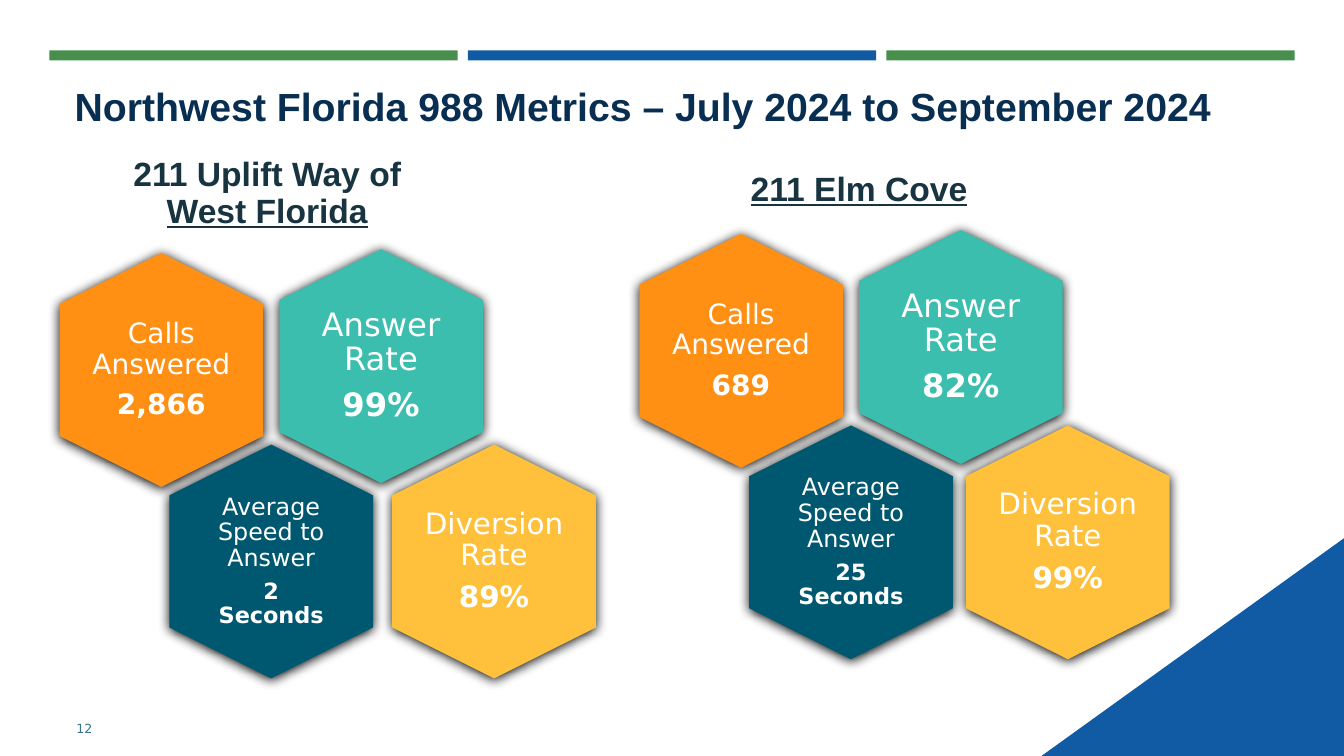
from lxml import etree
from pptx import Presentation
from pptx.dml.color import RGBColor
from pptx.enum.shapes import MSO_SHAPE
from pptx.enum.text import MSO_ANCHOR, MSO_AUTO_SIZE, PP_ALIGN
from pptx.oxml.ns import qn
from pptx.util import Inches, Pt

RECT, HEXA = MSO_SHAPE.RECTANGLE, MSO_SHAPE.HEXAGON
TOP, MID = MSO_ANCHOR.TOP, MSO_ANCHOR.MIDDLE
LEFT, MIDST = PP_ALIGN.LEFT, PP_ALIGN.CENTER
FIXED = MSO_AUTO_SIZE.NONE

WIDE, HIGH = 13.33, 7.5
COL, ROW = 1.09, 1.9
LONG, SHORT = 2.32, 2.02
SANS, ARIAL = "DejaVu Sans", "Arial"
HUES = {
    "green": "488F4D", "blue": "115BA4", "title": "082E52", "head": "193441",
    "page": "36718D", "white": "FFFFFF", "orange": "FF9014",
    "teal": "3CBEAE", "navy": "005870", "gold": "FFC03C",
}
CELLS = [
    ("teal", 2, -0.02, "Answer Rate", 23, 23, 0.1),
    ("orange", 0, 0, "Calls Answered", 20, 20, 0),
    ("navy", 1, 1, "Average Speed to Answer", 17, 16, 0.07),
    ("gold", 3, 1, "Diversion Rate", 21, 21, 0),
]
PANELS = [
    {"at": (0.44, 2.66), "head": (0.65, -1.24, 3.12, 1.01),
     "words": [("211 Uplift Way of ", False), ("West Florida", True)],
     "nums": ["99%", "2,866", "2 Seconds", "89%"], "nudge": 0.03},
    {"at": (6.19, 2.47), "head": (1.03, -0.94, 2.6, 0.72),
     "words": [("211 Elm Cove", True)],
     "nums": ["82%", "689", "25 Seconds", "99%"], "nudge": -0.03},
]


def rgb(hue):
    return RGBColor.from_string(HUES[hue])


def apply(thing, **looks):
    for key, val in looks.items():
        setattr(thing, key, val)


def paint(shape, hue):
    shape.shadow.inherit = False
    shape.fill.solid()
    shape.fill.fore_color.rgb = rgb(hue)
    shape.line.fill.background()


def write(par, text, hue, **looks):
    run = par.add_run()
    run.text = text
    apply(run.font, **looks)
    run.font.color.rgb = rgb(hue)


def frame(shape, inset, anchor=MID):
    text = shape.text_frame
    apply(text, word_wrap=True, auto_size=FIXED, vertical_anchor=anchor,
          margin_left=Inches(inset), margin_right=Inches(inset),
          margin_top=Inches(inset), margin_bottom=Inches(inset))
    return text


def label(shapes, box, inset):
    return frame(shapes.add_textbox(*map(Inches, box)), inset)


def centre(par, size):
    apply(par, alignment=MIDST, line_spacing=0.9, space_after=Pt(size * 0.35))


def shade(shape):
    effects = shape._element.spPr.find(qn("a:effectLst"))
    outer = etree.SubElement(effects, qn("a:outerShdw"), blurRad=str(Pt(8.5)),
                             dist=str(Pt(1)), dir="5400000", rotWithShape="0")
    etree.SubElement(outer, qn("a:srgbClr"), val="000000")


def banner(slide, box):
    left, top, width, height = box
    gap = 0.1
    part = (width - 2 * gap) / 3
    for i, hue in enumerate(["green", "blue", "green"]):
        spot = (left + i * (part + gap), top, part, height)
        paint(slide.shapes.add_shape(RECT, *map(Inches, spot)), hue)


def corner(slide, box):
    left, top, width, height = box
    right, base = left + width, top + height
    pen = slide.shapes.build_freeform(Inches(left), Inches(base))
    pen.add_line_segments([(Inches(right), Inches(top)),
                           (Inches(right), Inches(base))], close=True)
    paint(pen.convert_to_shape(), "blue")


def title(slide, box, text):
    head = slide.shapes.title
    spots = dict(zip(("left", "top", "width", "height"), map(Inches, box)))
    apply(head, **spots)
    body = frame(head, 0.1, TOP)
    body.margin_top = Inches(0.05)
    par = body.paragraphs[0]
    par.alignment = LEFT
    write(par, text, "title", name=ARIAL, size=Pt(28), bold=True)


def page(slide, box, text):
    par = label(slide.shapes, box, 0.1).paragraphs[0]
    write(par, text, "page", name=SANS, size=Pt(9))


def cell(shapes, box, hue, name, num, size, big, inset):
    left, top, width, height = box
    hexa = shapes.add_shape(HEXA, *map(Inches, box))
    hexa.rotation = 90
    hexa.adjustments[0] = 0.25
    hexa.adjustments[1] = 1.1547
    paint(hexa, hue)
    shade(hexa)
    spot = (left + width * 0.2, top + height * 0.105, width * 0.6, height * 0.79)
    text = label(shapes, spot, inset)
    rows = [(text.paragraphs[0], name, size, False),
            (text.add_paragraph(), num, big, True)]
    for par, words, points, bold in rows:
        centre(par, points)
        write(par, words, "white", name=SANS, size=Pt(points), bold=bold)


def panel(slide, info):
    left, top = info["at"]
    shapes = slide.shapes.add_group_shape().shapes
    for (hue, col, row, name, size, big, inset), num in zip(CELLS, info["nums"]):
        push = info["nudge"] if hue == "gold" else 0
        box = (left + col * COL + push, top + row * ROW, LONG, SHORT)
        cell(shapes, box, hue, name, num, size, big, inset)
    across, down, width, height = info["head"]
    text = label(shapes, (left + across, top + down, width, height), 0.1)
    par = text.paragraphs[0]
    centre(par, 24)
    for words, under in info["words"]:
        write(par, words, "head", name=ARIAL, size=Pt(24), bold=True,
              underline=under)


def main():
    deck = Presentation()
    apply(deck, slide_width=Inches(WIDE), slide_height=Inches(HIGH))
    slide = deck.slides.add_slide(deck.slide_layouts[5])
    banner(slide, (0.49, 0.5, 12.35, 0.1))
    corner(slide, (10.33, 5.34, WIDE - 10.33, HIGH - 5.34))
    title(slide, (0.64, 0.77, 12.06, 1.3),
          "Northwest Florida 988 Metrics – July 2024 to September 2024")
    page(slide, (0.66, 7.03, 1.15, 0.4), "12")
    for info in PANELS:
        panel(slide, info)
    deck.save("out.pptx")


if __name__ == "__main__":
    main()
